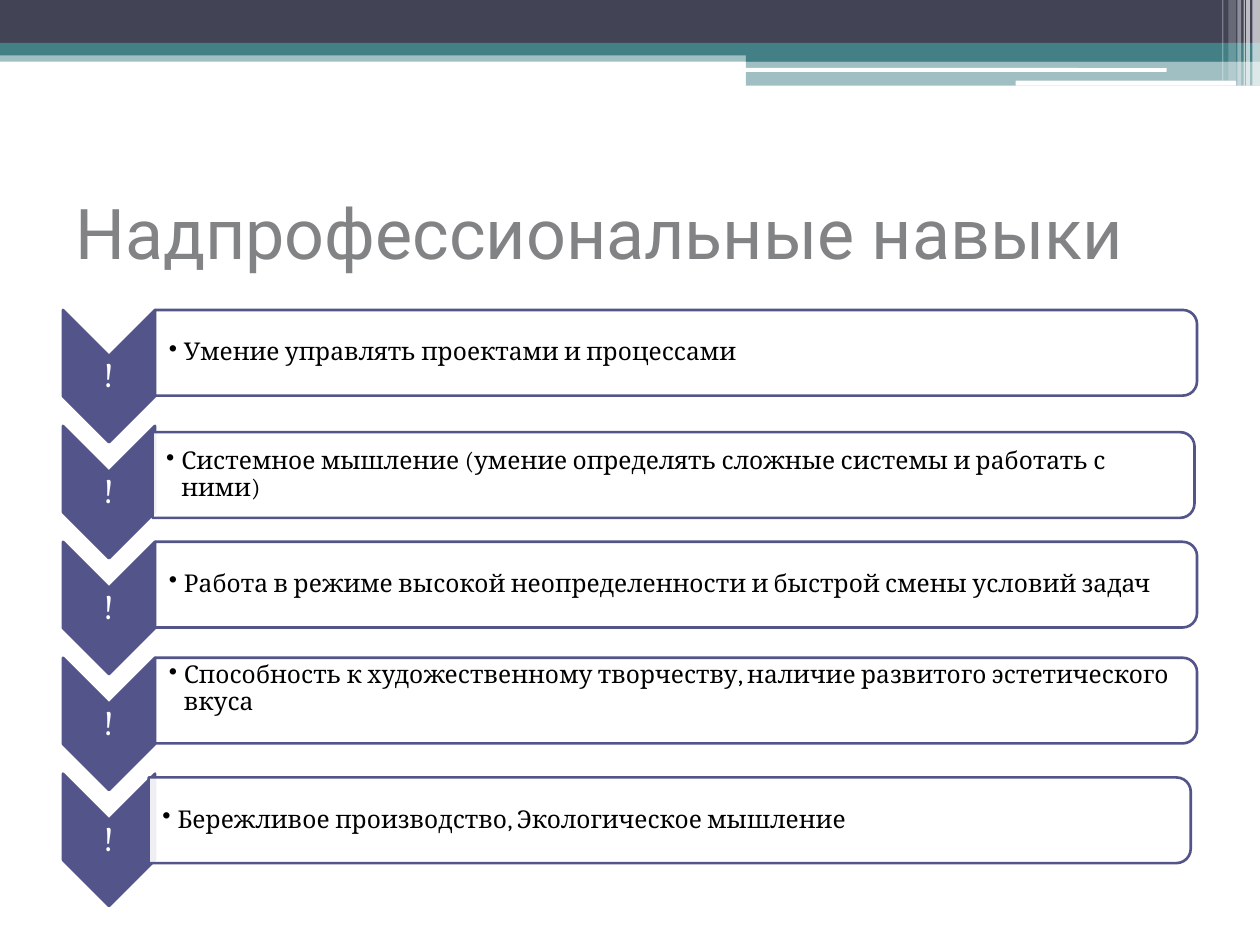
from dataclasses import dataclass

from pptx import Presentation
from pptx import util as u
from pptx.dml.color import RGBColor
from pptx.enum import shapes, text
from pptx.oxml.ns import qn
from lxml import etree


@dataclass(frozen=True)
class Theme:
    dark: str = "424456"
    teal: str = "438086"
    indigo: str = "53548A"
    white: str = "FFFFFF"
    black: str = "000000"
    title_gray: str = "818385"
    title_font: str = "Roboto"
    body_font: str = "Cambria"
    title_size: int = 40
    mark_size: int = 20
    body_size: int = 14


THEME = Theme()
SKILLS = [
    ("Умение управлять проектами и процессами", 0, 0, text.MSO_ANCHOR.MIDDLE),
    ("Системное мышление (умение определять сложные системы и работать с ними)",
     -0.02, 0.05, text.MSO_ANCHOR.MIDDLE),
    ("Работа в режиме высокой неопределенности и быстрой смены условий задач",
     0, 0, text.MSO_ANCHOR.MIDDLE),
    ("Способность к художественному творчеству, наличие развитого эстетического вкуса",
     0, 0, text.MSO_ANCHOR.TOP),
    ("Бережливое производство, Экологическое мышление", -0.05, 0.03, text.MSO_ANCHOR.MIDDLE),
]


def add_shape(slide, kind, box, fill, opacity=100, line=None):
    shape = slide.shapes.add_shape(kind, *map(u.Inches, box))
    shape.shadow.inherit = False
    shape.fill.solid()
    shape.fill.fore_color.rgb = RGBColor.from_string(fill)
    if opacity < 100:
        color = shape.fill._xPr.find(qn("a:solidFill"))[0]
        etree.SubElement(color, qn("a:alpha"), val=str(opacity * 1000))
    if line:
        shape.line.color.rgb = RGBColor.from_string(line)
        shape.line.width = u.Pt(1.5)
    else:
        shape.line.fill.background()
    return shape


def add_turned_shape(slide, kind, box, fill, opacity=100):
    left, top, width, height = box
    shift = (width - height) / 2
    shape = add_shape(slide, kind, (left + shift, top - shift, height, width),
                      fill, opacity, THEME.indigo)
    shape.rotation = 90


def add_text(slide, box, words, font, size, color, insets=(0.01, 0.01, 0.01, 0.01),
             anchor=text.MSO_ANCHOR.MIDDLE):
    frame = slide.shapes.add_textbox(*map(u.Inches, box)).text_frame
    frame.word_wrap = True
    frame.vertical_anchor = anchor
    (frame.margin_left, frame.margin_top,
     frame.margin_right, frame.margin_bottom) = map(u.Inches, insets)
    paragraph = frame.paragraphs[0]
    run = paragraph.add_run()
    run.text = words
    run.font.name = font
    run.font.size = u.Pt(size)
    run.font.color.rgb = RGBColor.from_string(color)
    return paragraph


def add_bullet(paragraph):
    properties = paragraph._p.get_or_add_pPr()
    properties.set("marL", str(u.Inches(0.12)))
    properties.set("indent", str(u.Inches(-0.12)))
    etree.SubElement(properties, qn("a:buChar"), char="•")


def add_header(slide, box):
    left, top, width, height = box
    right = left + width
    rectangle = shapes.MSO_SHAPE.RECTANGLE
    rounded = shapes.MSO_SHAPE.ROUNDED_RECTANGLE
    bands = [
        (rectangle, 0, 0.4, width, 0.09, THEME.teal, 50),
        (rectangle, 0, 0, width, 0.34, THEME.dark, 100),
        (rectangle, 0, 0.34, width, 0.1, THEME.teal, 100),
        (rectangle, 5.92, 0.39, 4.08, 0.1, THEME.teal, 100),
        (rectangle, 5.92, 0.48, 4.08, 0.2, THEME.teal, 50),
        (rounded, 5.91, 0.54, 3.35, 0.03, THEME.white, 100),
        (rounded, 8.06, 0.64, 1.75, 0.04, THEME.white, 100),
    ]
    for kind, x, y, band_width, band_height, color, opacity in bands:
        add_shape(slide, kind, (left + x, top + y, band_width, band_height), color, opacity)
    stripes = [(0.06, 0.06, height, 65), (0.11, 0.03, height, 65), (0.13, 0.01, height, 60),
               (0.18, 0.03, height, 40), (0.25, 0.06, 0.64, 20), (0.3, 0.01, 0.64, 30)]
    for offset, stripe_width, stripe_height, opacity in stripes:
        add_shape(slide, rectangle, (right - offset, top, stripe_width, stripe_height),
                  THEME.white, opacity)


def add_title(slide, box):
    add_text(slide, box, "Надпрофессиональные навыки", THEME.title_font, THEME.title_size,
             THEME.title_gray, (0.1, 0.05, 0.1, 0.05))


def add_skill(slide, box, words, shift_x, shift_y, anchor):
    left, top, width, height = box
    mark_width, panel_height = 0.73, 0.68
    add_turned_shape(slide, shapes.MSO_SHAPE.CHEVRON, (left, top, mark_width, height),
                     THEME.indigo)
    mark = add_text(slide, (left, top + 0.37, mark_width, 0.31), "!", THEME.body_font,
                    THEME.mark_size, THEME.white)
    mark.alignment = text.PP_ALIGN.CENTER
    mark.line_spacing = 0.9

    panel_left, panel_top = left + mark_width + shift_x, top + shift_y
    panel_width = width - mark_width
    add_turned_shape(slide, shapes.MSO_SHAPE.ROUND_2_SAME_RECTANGLE,
                     (panel_left, panel_top, panel_width, panel_height), THEME.white, 90)
    skill = add_text(slide, (panel_left, panel_top + 0.03, panel_width - 0.04, 0.62), words,
                     THEME.body_font, THEME.body_size, THEME.black,
                     (0.11, 0.01, 0.01, 0.01), anchor)
    skill.line_spacing = 0.9
    add_bullet(skill)


def add_skill_list(slide, box):
    left, top, width, height = box
    row_height = 1.05
    pitch = (height - row_height) / (len(SKILLS) - 1)
    for index, skill in enumerate(SKILLS):
        add_skill(slide, (left, top + index * pitch, width, row_height), *skill)


def main():
    presentation = Presentation()
    presentation.slide_width = u.Inches(10)
    presentation.slide_height = u.Inches(7.5)
    slide = presentation.slides.add_slide(presentation.slide_layouts[6])
    add_header(slide, (0, 0, 10, 0.68))
    add_title(slide, (0.5, 1.25, 9, 1.17))
    add_skill_list(slide, (0.5, 2.46, 9, 4.73))
    presentation.save("out.pptx")


if __name__ == "__main__":
    main()
